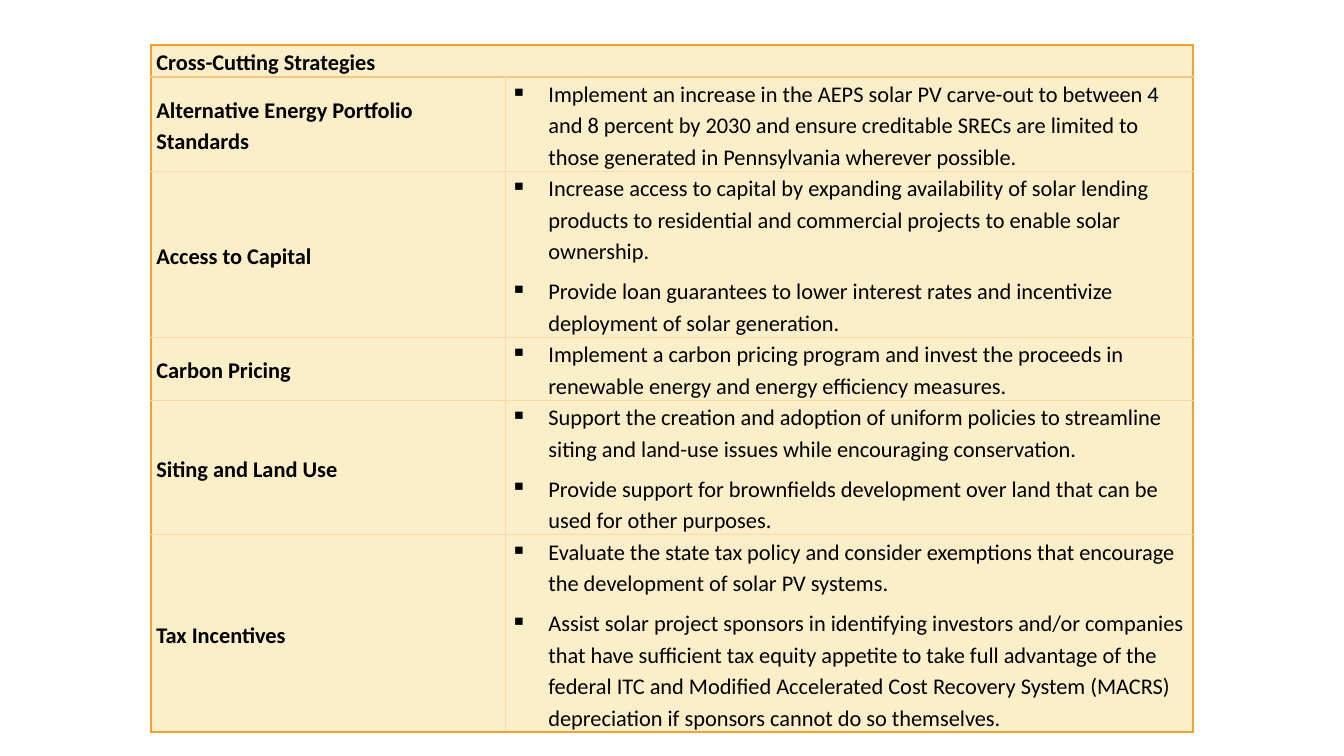
from lxml.etree import SubElement, Element
from pptx import Presentation
from pptx.dml.color import RGBColor as Rgb
from pptx.enum.text import MSO_ANCHOR as Anchor
from pptx.oxml.ns import qn
from pptx.util import Cm, Pt

COLORS = {
    "text": "000000",
    "cell": "FBEEC9",
    "frame": "F0A22E",
    "header_rule": "F6C681",
    "grid": "F9D9AB",
}
FONT = "Calibri"
HEADING = "Cross-Cutting Strategies"
STRATEGIES = [
    ("Alternative Energy Portfolio Standards", [
        "Implement an increase in the AEPS solar PV carve-out to between 4 and 8 percent by 2030 "
        "and ensure creditable SRECs are limited to those generated in Pennsylvania wherever possible.",
    ]),
    ("Access to Capital", [
        "Increase access to capital by expanding availability of solar lending products to "
        "residential and commercial projects to enable solar ownership.",
        "Provide loan guarantees to lower interest rates and incentivize deployment of solar generation.",
    ]),
    ("Carbon Pricing", [
        "Implement a carbon pricing program and invest the proceeds in renewable energy and "
        "energy efficiency measures.",
    ]),
    ("Siting and Land Use", [
        "Support the creation and adoption of uniform policies to streamline siting and land-use "
        "issues while encouraging conservation.",
        "Provide support for brownfields development over land that can be used for other purposes.",
    ]),
    ("Tax Incentives", [
        "Evaluate the state tax policy and consider exemptions that encourage the development of "
        "solar PV systems.",
        "Assist solar project sponsors in identifying investors and/or companies that have "
        "sufficient tax equity appetite to take full advantage of the federal ITC and Modified "
        "Accelerated Cost Recovery System (MACRS) depreciation if sponsors cannot do so themselves.",
    ]),
]
ROW_HEIGHTS = [0.8, 2.36, 4.18, 1.59, 3.38, 4.98]
LABEL_SHARE = 0.34
FRAME = ("frame", 1.5)
HEADER_RULE = ("header_rule", 1.5)
GRID = ("grid", 1)


def set_borders(cell, left, right, top, bottom):
    properties = cell._tc.get_or_add_tcPr()
    sides = zip(("lnL", "lnR", "lnT", "lnB"), (left, right, top, bottom))
    for index, (tag, (color, points)) in enumerate(sides):
        line = Element(qn(f"a:{tag}"), w=str(Pt(points)))
        fill = SubElement(line, qn("a:solidFill"))
        SubElement(fill, qn("a:srgbClr"), val=COLORS[color])
        properties.insert(index, line)


def style_cell(cell, row, column, last_row):
    cell.fill.solid()
    cell.fill.fore_color.rgb = Rgb.from_string(COLORS["cell"])
    cell.vertical_anchor = Anchor.MIDDLE
    cell.margin_left = cell.margin_right = Cm(0.14)
    cell.margin_top = cell.margin_bottom = 0
    header = row == 0
    set_borders(
        cell,
        left=FRAME if header or column == 0 else GRID,
        right=FRAME if header or column == 1 else GRID,
        top=FRAME if header else HEADER_RULE if row == 1 else GRID,
        bottom=HEADER_RULE if header else FRAME if row == last_row else GRID,
    )


def add_text(paragraph, text, bold):
    paragraph.line_spacing = 1.15
    run = paragraph.add_run()
    run.text = text
    run.font.name = FONT
    run.font.size = Pt(16)
    run.font.bold = bold
    run.font.color.rgb = Rgb.from_string(COLORS["text"])


def write_label(cell, text):
    paragraph = cell.text_frame.paragraphs[0]
    paragraph.space_before = Pt(10)
    add_text(paragraph, text, True)


def write_bullets(cell, actions):
    text_frame = cell.text_frame
    for index, action in enumerate(actions):
        paragraph = text_frame.add_paragraph() if index else text_frame.paragraphs[0]
        paragraph.space_before = Pt(0 if index else 10)
        paragraph.space_after = Pt(6)
        add_text(paragraph, action, False)
        properties = paragraph._p.get_or_add_pPr()
        properties.set("marL", str(Cm(0.95)))
        properties.set("indent", str(Cm(-0.95)))
        SubElement(properties, qn("a:buChar"), char="▪")


def add_strategy_table(slide, left, top, width, height):
    row_count = len(STRATEGIES) + 1
    table = slide.shapes.add_table(row_count, 2, left, top, width, height).table
    table.horz_banding = False
    table.first_row = False
    table.columns[0].width = int(width * LABEL_SHARE)
    table.columns[1].width = width - table.columns[0].width
    for row, row_height in zip(table.rows, ROW_HEIGHTS):
        row.height = Cm(row_height)
    for row in range(row_count):
        for column in range(2):
            style_cell(table.cell(row, column), row, column, row_count - 1)
    table.cell(0, 0).merge(table.cell(0, 1))
    write_label(table.cell(0, 0), HEADING)
    for row, (label, actions) in enumerate(STRATEGIES, start=1):
        write_label(table.cell(row, 0), label)
        write_bullets(table.cell(row, 1), actions)


def main():
    presentation = Presentation()
    presentation.slide_width = Cm(33.87)
    presentation.slide_height = Cm(19.05)
    slide = presentation.slides.add_slide(presentation.slide_layouts[6])
    add_strategy_table(slide, Cm(3.8), Cm(1.14), Cm(26.27), Cm(sum(ROW_HEIGHTS)))
    presentation.save("out.pptx")


if __name__ == "__main__":
    main()
